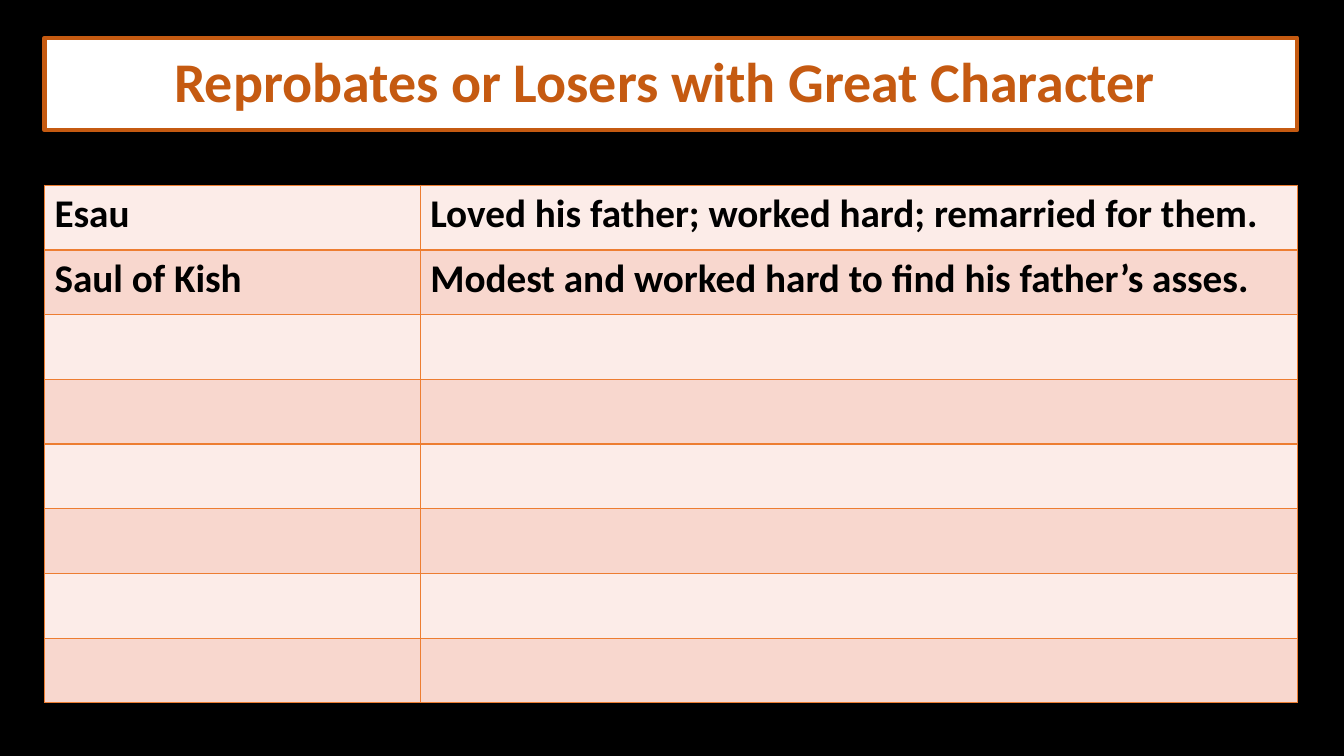
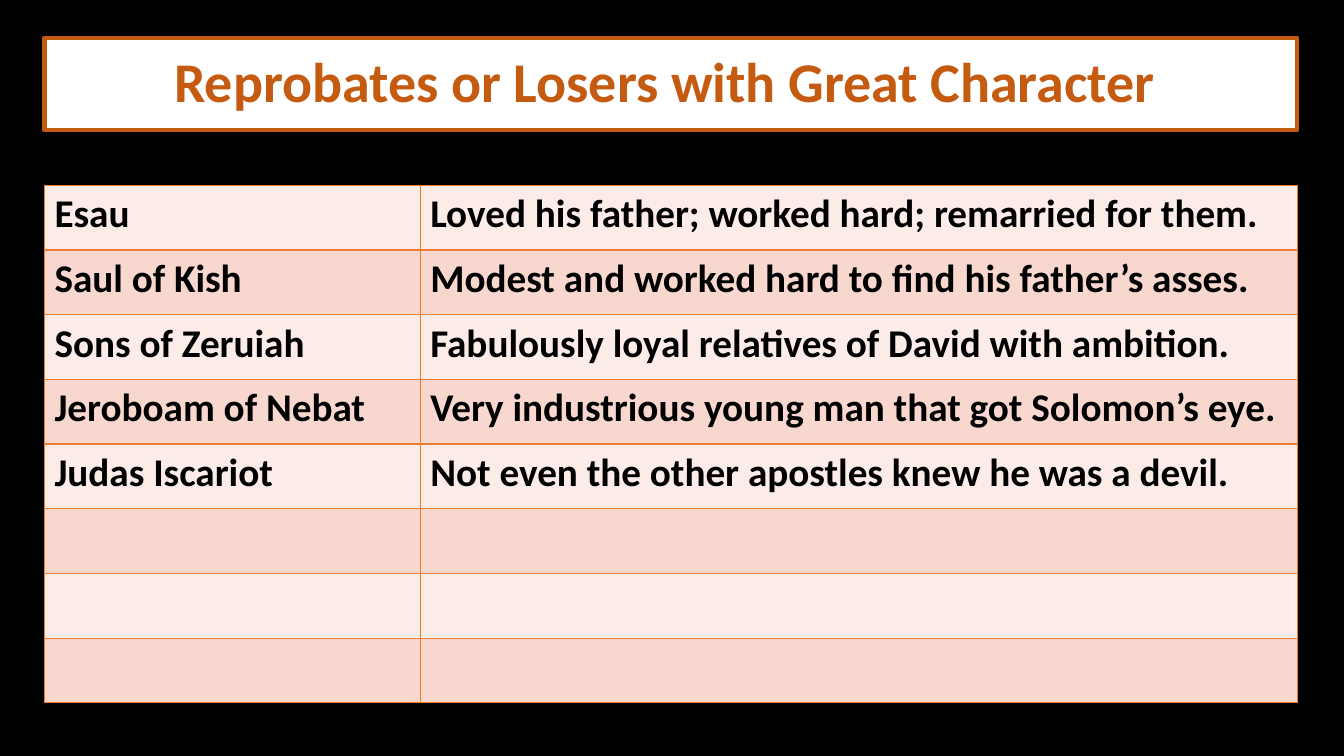
"""Build two slides that fill in a table of reprobates with great character."""
from dataclasses import dataclass

from lxml import etree
from pptx import Presentation
from pptx.dml.color import RGBColor
from pptx.enum.text import MSO_ANCHOR, MSO_AUTO_SIZE, PP_ALIGN
from pptx.oxml.ns import qn
from pptx.util import Cm, Pt

CENTER = PP_ALIGN.CENTER
MIDDLE = MSO_ANCHOR.MIDDLE
NO_AUTOFIT = MSO_AUTO_SIZE.NONE
TITLE_ONLY = 5


@dataclass(frozen=True)
class Theme:
    font: str = "Calibri"
    background: str = "000000"
    title_fill: str = "FFFFFF"
    title_accent: str = "C55A11"
    body_text: str = "000000"
    grid: str = "ED7D31"
    bands: tuple = ("FCECE8", "F8D7CE")
    title_size: int = 40
    body_size: int = 28
    title_line: int = 3
    grid_line: int = 1


THEME = Theme()
TITLE = "Reprobates or Losers with Great Character "
PEOPLE = [
    ("Esau", "Loved his father; worked hard; remarried for them."),
    ("Saul of Kish", "Modest and worked hard to find his father’s asses."),
    ("Sons of Zeruiah", "Fabulously loyal relatives of David with ambition."),
    ("Jeroboam of Nebat", "Very industrious young man that got Solomon’s eye."),
    ("Judas Iscariot", "Not even the other apostles knew he was a devil."),
]
SHOWN_COUNTS = (2, 5)
ROW_COUNT = 8
LEFT = Cm(1.12)
COLUMN_WIDTHS = (Cm(9.47), Cm(22.1))
CONTENT_WIDTH = sum(COLUMN_WIDTHS)
ROW_HEIGHT = Cm(1.63)


def add_run(paragraph, text, size, color):
    run = paragraph.add_run()
    run.text = text
    run.font.name = THEME.font
    run.font.size = Pt(size)
    run.font.bold = True
    run.font.color.rgb = RGBColor.from_string(color)


def style_cell(cell, band):
    properties = cell._tc.get_or_add_tcPr()
    for side in ("a:lnL", "a:lnR", "a:lnT", "a:lnB"):
        border = etree.SubElement(properties, qn(side), w=str(Pt(THEME.grid_line)))
        solid = etree.SubElement(border, qn("a:solidFill"))
        etree.SubElement(solid, qn("a:srgbClr"), val=THEME.grid)
    cell.fill.solid()
    cell.fill.fore_color.rgb = RGBColor.from_string(band)


prs = Presentation()
prs.slide_width = Cm(33.87)
prs.slide_height = Cm(19.05)
backdrop = prs.slide_master.background.fill
backdrop.solid()
backdrop.fore_color.rgb = RGBColor.from_string(THEME.background)

for shown_count in SHOWN_COUNTS:
    slide = prs.slides.add_slide(prs.slide_layouts[TITLE_ONLY])

    heading = slide.shapes.title
    heading.left, heading.top = LEFT, Cm(0.95)
    heading.width, heading.height = CONTENT_WIDTH, Cm(2.33)
    heading.fill.solid()
    heading.fill.fore_color.rgb = RGBColor.from_string(THEME.title_fill)
    heading.line.color.rgb = RGBColor.from_string(THEME.title_accent)
    heading.line.width = Pt(THEME.title_line)
    heading.text_frame.auto_size = NO_AUTOFIT
    heading.text_frame.vertical_anchor = MIDDLE
    heading_line = heading.text_frame.paragraphs[0]
    heading_line.alignment = CENTER
    heading_line.line_spacing = 0.9
    add_run(heading_line, TITLE, THEME.title_size, THEME.title_accent)

    people_table = slide.shapes.add_table(
        ROW_COUNT, len(COLUMN_WIDTHS), LEFT, Cm(4.67),
        CONTENT_WIDTH, ROW_HEIGHT * ROW_COUNT).table
    people_table.first_row = False
    for column, width in zip(people_table.columns, COLUMN_WIDTHS):
        column.width = width
    for index, row in enumerate(people_table.rows):
        row.height = ROW_HEIGHT
        for cell in row.cells:
            style_cell(cell, THEME.bands[index % 2])
    for row, person in zip(people_table.rows, PEOPLE[:shown_count]):
        for cell, text in zip(row.cells, person):
            add_run(cell.text_frame.paragraphs[0], text,
                    THEME.body_size, THEME.body_text)

prs.save("out.pptx")
